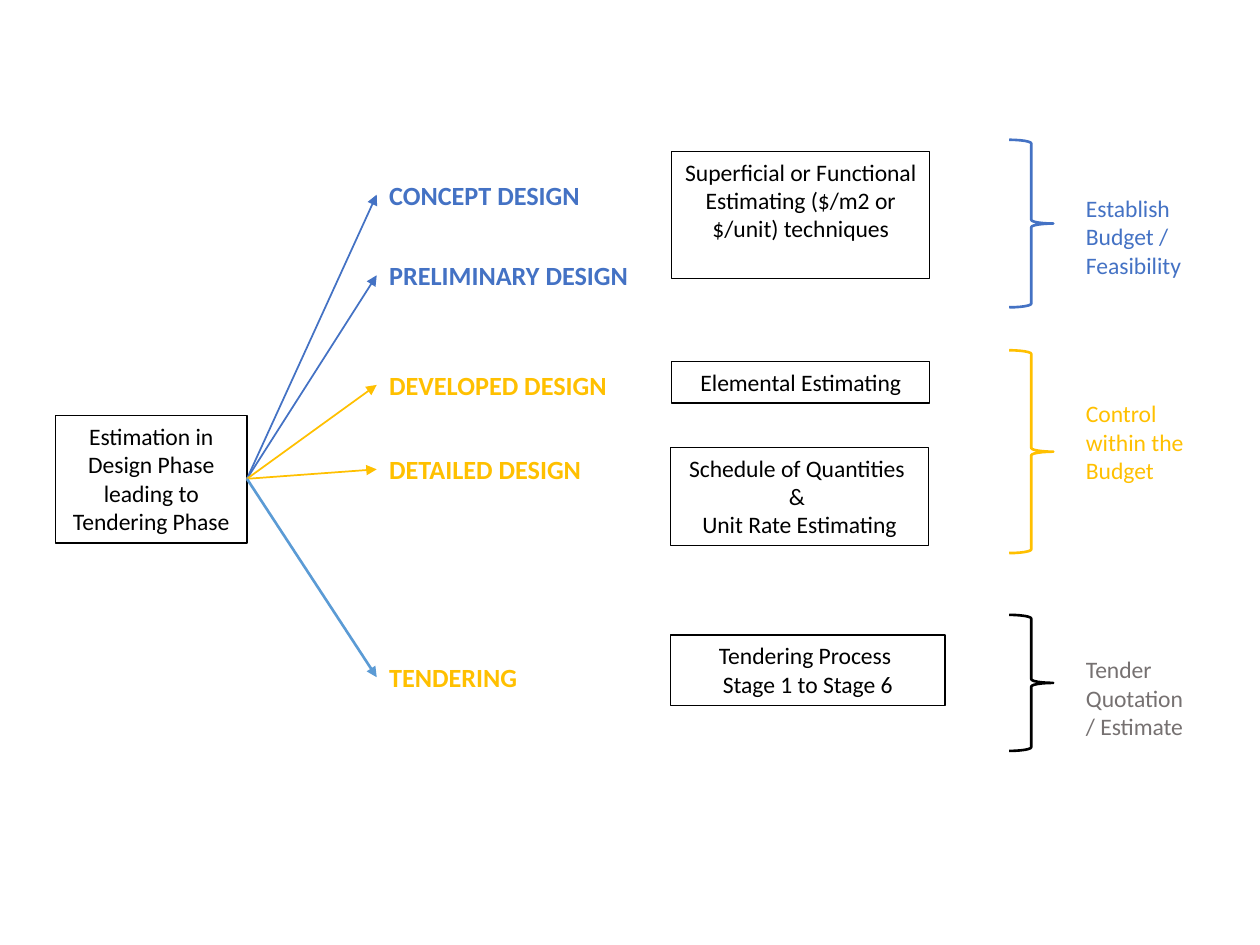
from dataclasses import dataclass

from lxml import etree
from pptx import Presentation
from pptx.dml.color import RGBColor
from pptx.enum.shapes import MSO_CONNECTOR, MSO_SHAPE
from pptx.enum.text import MSO_ANCHOR, PP_ALIGN
from pptx.oxml.ns import qn
from pptx.util import Inches, Pt

RECTANGLE = MSO_SHAPE.RECTANGLE
RIGHT_BRACE = MSO_SHAPE.RIGHT_BRACE
STRAIGHT = MSO_CONNECTOR.STRAIGHT
TOP = MSO_ANCHOR.TOP
LEFT, CENTER = PP_ALIGN.LEFT, PP_ALIGN.CENTER


@dataclass(frozen=True)
class Theme:
    font: str = "Calibri"
    body_size: float = 13.5
    phase_size: float = 15
    blue: str = "4472C4"
    light_blue: str = "5B9BD5"
    gold: str = "FFC000"
    black: str = "000000"
    gray: str = "767171"
    box_line: float = 0.75
    arrow_line: float = 1
    heavy_line: float = 1.5


THEME = Theme()


@dataclass(frozen=True)
class Phase:
    name: str
    top: float
    color: str
    arrow_color: str
    arrow_width: float = THEME.arrow_line
    width: float = 2.2


@dataclass(frozen=True)
class Box:
    lines: tuple[str, ...]
    left: float
    top: float
    width: float
    height: float


@dataclass(frozen=True)
class Goal:
    text: str
    text_top: float
    text_color: str
    brace_top: float
    brace_height: float
    brace_color: str


ORIGIN = (1.96, 3.8)
PHASE_LEFT, PHASE_HEIGHT = 2.99, 0.35
BRACE_LEFT, BRACE_WIDTH = 8.01, 0.35
GOAL_LEFT, GOAL_WIDTH, GOAL_HEIGHT = 8.52, 1.02, 0.78

PHASES = (
    Phase("CONCEPT DESIGN", 1.37, THEME.blue, THEME.blue),
    Phase("PRELIMINARY DESIGN", 2.01, THEME.blue, THEME.blue),
    Phase("DEVELOPED DESIGN", 2.88, THEME.gold, THEME.gold),
    Phase("DETAILED DESIGN", 3.55, THEME.gold, THEME.gold, width=1.91),
    Phase("TENDERING", 5.2, THEME.gold, THEME.light_blue, THEME.heavy_line, 1.91),
)

BOXES = (
    Box(("Estimation in Design Phase leading to Tendering Phase",), 0.44, 3.3, 1.52, 1.01),
    Box(("Superficial or Functional Estimating ($/m2 or $/unit) techniques",),
        5.33, 1.2, 2.05, 1.01),
    Box(("Elemental Estimating",), 5.33, 2.87, 2.05, 0.33),
    Box(("Schedule of Quantities ", "& ", "Unit Rate Estimating"), 5.32, 3.55, 2.05, 0.78),
    Box(("Tendering Process ", "Stage 1 to Stage 6"), 5.32, 5.04, 2.18, 0.56),
)

GOALS = (
    Goal("Establish Budget / Feasibility", 1.49, THEME.blue, 1.11, 1.33, THEME.blue),
    Goal("Control within the Budget", 3.12, THEME.gold, 2.78, 1.61, THEME.gold),
    Goal("Tender Quotation / Estimate", 5.15, THEME.gray, 4.88, 1.08, THEME.black),
)


def write_text(shape, lines: tuple[str, ...], *, size: float = THEME.body_size,
               color: str = THEME.black, bold: bool = False, align=LEFT) -> None:
    frame = shape.text_frame
    frame.word_wrap = True
    frame.vertical_anchor = TOP
    for index, line in enumerate(lines):
        para = frame.add_paragraph() if index else frame.paragraphs[0]
        para.alignment = align
        span = para.add_run()
        span.text = line
        span.font.name = THEME.font
        span.font.size = Pt(size)
        span.font.bold = bold
        span.font.color.rgb = RGBColor.from_string(color)


def set_line(shape, color: str, width: float) -> None:
    shape.line.color.rgb = RGBColor.from_string(color)
    shape.line.width = Pt(width)


def add_outline(page, kind, left: float, top: float, width: float, height: float,
                color: str, line_width: float):
    shape = page.shapes.add_shape(
        kind, Inches(left), Inches(top), Inches(width), Inches(height))
    shape.shadow.inherit = False
    shape.fill.background()
    set_line(shape, color, line_width)
    return shape


def add_label(page, text: str, left: float, top: float, width: float, height: float,
              **text_format) -> None:
    label = page.shapes.add_textbox(
        Inches(left), Inches(top), Inches(width), Inches(height))
    write_text(label, (text,), **text_format)


def add_arrow(page, phase: Phase) -> None:
    start_x, start_y = ORIGIN
    arrow = page.shapes.add_connector(
        STRAIGHT, Inches(start_x), Inches(start_y),
        Inches(PHASE_LEFT), Inches(phase.top + PHASE_HEIGHT / 2))
    set_line(arrow, phase.arrow_color, phase.arrow_width)
    etree.SubElement(arrow.line._get_or_add_ln(), qn("a:tailEnd"), type="triangle")
    etree.SubElement(arrow._element.spPr, qn("a:effectLst"))


def add_phase(page, phase: Phase) -> None:
    add_arrow(page, phase)
    add_label(page, phase.name, PHASE_LEFT, phase.top, phase.width, PHASE_HEIGHT,
              size=THEME.phase_size, color=phase.color, bold=True)


def add_box(page, box: Box) -> None:
    shape = add_outline(page, RECTANGLE, box.left, box.top, box.width, box.height,
                        THEME.black, THEME.box_line)
    write_text(shape, box.lines, align=CENTER)


def add_goal(page, goal: Goal) -> None:
    add_outline(page, RIGHT_BRACE, BRACE_LEFT, goal.brace_top, BRACE_WIDTH,
                goal.brace_height, goal.brace_color, THEME.heavy_line)
    add_label(page, goal.text, GOAL_LEFT, goal.text_top, GOAL_WIDTH, GOAL_HEIGHT,
              color=goal.text_color)


def main() -> None:
    deck = Presentation()
    deck.slide_width, deck.slide_height = Inches(10), Inches(7.5)
    page = deck.slides.add_slide(deck.slide_layouts[6])
    for box in BOXES:
        add_box(page, box)
    for phase in PHASES:
        add_phase(page, phase)
    for goal in GOALS:
        add_goal(page, goal)
    deck.save("out.pptx")


if __name__ == "__main__":
    main()
